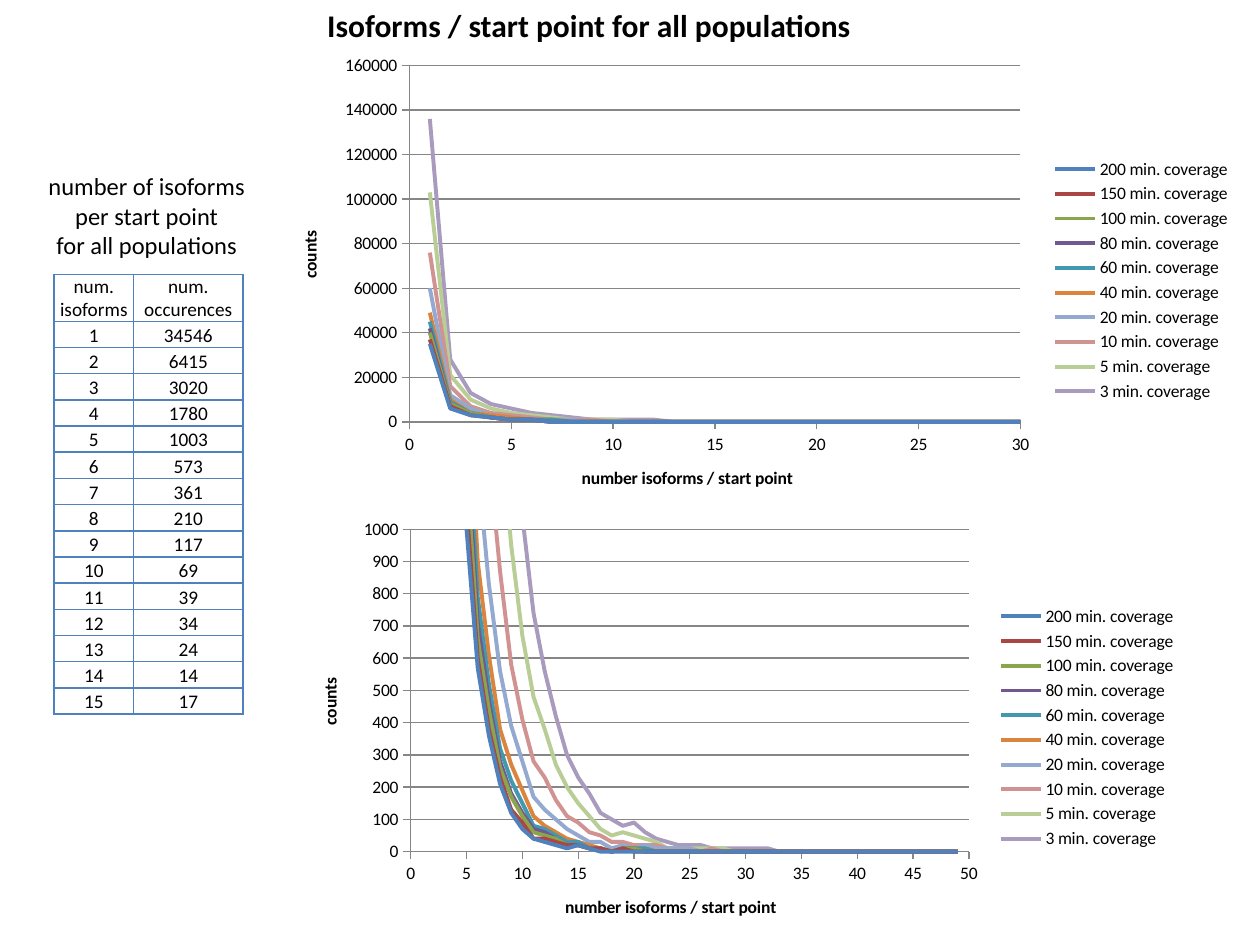
from lxml.etree import SubElement
from pptx import Presentation
from pptx.chart.data import XyChartData
from pptx.dml.color import RGBColor
from pptx.enum.chart import XL_CHART_TYPE, XL_LEGEND_POSITION, XL_TICK_LABEL_POSITION, XL_TICK_MARK
from pptx.enum.text import MSO_ANCHOR, MSO_AUTO_SIZE, PP_ALIGN
from pptx.oxml import parse_xml
from pptx.oxml.ns import nsdecls, qn
from pptx.util import Inches, Pt

FONT = "Calibri"
COLORS = {"text": "000000", "border": "4F81BD", "axis": "868686"}

# Text boxes: lines, (left, top, width, height), size, bold
TEXTS = [
    (["Isoforms / start point for all populations"], (2.48, 0, 4.39, 0.4), 18, True),
    (["number of isoforms", "per start point", "for all populations"],
     (0.28, 1.31, 1.77, 0.81), 14, False),
]

# Table
HEADERS = ["num.\nisoforms", "num. occurences"]
OCCURRENCES = [34546, 6415, 3020, 1780, 1003, 573, 361, 210, 117, 69, 39, 34, 24, 14, 17]
TABLE_LEFT, TABLE_TOP, TABLE_HEIGHT = 0.43, 2.18, 3.49
COLUMN_WIDTHS = [0.63, 0.87]
HEADER_HEIGHT = 0.37

# Minimum coverage: line colour, counts for 1, 2, 3 ... isoforms (zero after the last)
POINT_COUNT = 49
COVERAGE = {
    200: ("4F81BD", [34550, 6420, 3020, 1780, 1000, 570, 360, 210, 120, 70, 40, 30, 20, 10,
                     20, 10]),
    150: ("AA4643", [36570, 6920, 3230, 1890, 1070, 600, 380, 230, 130, 90, 40, 40, 30, 20,
                     20, 10, 10, 0, 10]),
    100: ("89A54E", [39690, 7720, 3550, 2050, 1200, 660, 440, 260, 170, 110, 60, 50, 40, 20,
                     20, 10, 10, 0, 10, 10]),
    80: ("71588F", [41590, 8200, 3750, 2160, 1280, 710, 470, 280, 180, 120, 70, 60, 40, 20,
                    20, 10, 10, 0, 10, 10]),
    60: ("4198AF", [44540, 8870, 4020, 2310, 1390, 790, 520, 320, 220, 150, 80, 70, 50, 30,
                    30, 10, 10, 0, 10, 10, 10]),
    40: ("DB843D", [49290, 9950, 4450, 2550, 1580, 900, 610, 380, 270, 190, 110, 80, 60, 40,
                    30, 20, 10, 0, 10, 10, 10]),
    20: ("93A9CF", [60280, 12410, 5520, 3210, 2000, 1200, 830, 560, 390, 280, 170, 130, 100,
                    70, 50, 30, 30, 10, 20, 10, 20, 10, 10, 10, 10]),
    10: ("D19392", [76450, 15810, 7100, 4190, 2740, 1710, 1230, 870, 580, 410, 280, 230, 160,
                    110, 90, 60, 50, 30, 30, 20, 20, 20, 10, 10, 10, 0, 10]),
    5: ("B9CD96", [103070, 21160, 9660, 5900, 3960, 2640, 1890, 1360, 950, 670, 480, 380, 270,
                   200, 150, 110, 70, 50, 60, 50, 40, 30, 10, 10, 10, 10, 10, 10]),
    3: ("A99BBD", [136260, 27710, 12950, 8190, 5590, 3790, 2780, 2060, 1440, 1040, 740, 560,
                   420, 300, 230, 180, 120, 100, 80, 90, 60, 40, 30, 20, 20, 20, 10, 10, 10,
                   10, 10, 10]),
}

# Charts: frame, plot area on the slide, x limits, y limits, rounding digits
CHARTS = [
    ((2.17, 0.36, 7.7, 3.73), (3.25, 0.52, 4.85, 2.83), (0, 30), None, -3),
    ((2.32, 4.05, 7.12, 3.45), (3.26, 4.2, 4.43, 2.56), (0, 50), (0, 1000), -1),
]


def style_font(font, size, bold=False):
    font.name, font.size, font.bold = FONT, Pt(size), bold
    font.color.rgb = RGBColor.from_string(COLORS["text"])


def style_paragraphs(text_frame, size, bold=False):
    for paragraph in text_frame.paragraphs:
        paragraph.alignment = PP_ALIGN.CENTER
        for run in paragraph.runs:
            style_font(run.font, size, bold)


def style_line(line, color, width):
    line.color.rgb = RGBColor.from_string(color)
    line.width = Pt(width)


def add_text(slide, lines, frame, size, bold):
    text_frame = slide.shapes.add_textbox(*map(Inches, frame)).text_frame
    text_frame.word_wrap = False
    text_frame.auto_size = MSO_AUTO_SIZE.SHAPE_TO_FIT_TEXT
    text_frame.text = "\n".join(lines)
    style_paragraphs(text_frame, size, bold)


def style_cell(cell):
    cell.margin_left = cell.margin_right = cell.margin_top = cell.margin_bottom = 0
    cell.vertical_anchor = MSO_ANCHOR.BOTTOM
    style_paragraphs(cell.text_frame, 11)
    properties = cell._tc.get_or_add_tcPr()
    for side in ("lnL", "lnR", "lnT", "lnB"):
        properties.append(parse_xml(
            f'<a:{side} {nsdecls("a")} w="{Pt(1)}"><a:solidFill>'
            f'<a:srgbClr val="{COLORS["border"]}"/></a:solidFill></a:{side}>'))
    cell.fill.background()


def add_occurrence_table(slide):
    rows = [HEADERS] + [[str(number), str(count)]
                        for number, count in enumerate(OCCURRENCES, 1)]
    row_height = (TABLE_HEIGHT - HEADER_HEIGHT) / len(OCCURRENCES)
    heights = [HEADER_HEIGHT] + [row_height] * len(OCCURRENCES)
    table = slide.shapes.add_table(
        len(rows), len(HEADERS), Inches(TABLE_LEFT), Inches(TABLE_TOP),
        Inches(sum(COLUMN_WIDTHS)), Inches(TABLE_HEIGHT)).table
    table.first_row = table.horz_banding = False
    for column, width in zip(table.columns, COLUMN_WIDTHS):
        column.width = Inches(width)
    for row, height, texts in zip(table.rows, heights, rows):
        row.height = Inches(height)
        for cell, text in zip(row.cells, texts):
            cell.text_frame.text = text
            style_cell(cell)


def place_plot(chart, frame, plot_frame):
    left, top, width, height = frame
    plot_left, plot_top, plot_width, plot_height = plot_frame
    fractions = ((plot_left - left) / width, (plot_top - top) / height,
                 plot_width / width, plot_height / height)
    plot_area = chart._chartSpace.chart.plotArea
    for layout in plot_area.findall(qn("c:layout")):
        plot_area.remove(layout)
    layout = parse_xml(f'<c:layout {nsdecls("c")}><c:manualLayout/></c:layout>')
    settings = [("layoutTarget", "inner"), ("xMode", "edge"), ("yMode", "edge"),
                *zip("xywh", fractions)]
    for name, value in settings:
        SubElement(layout[0], qn(f"c:{name}")).set("val", str(value))
    plot_area.insert(0, layout)


def style_axis(axis, title, limits, gridlines):
    axis.axis_title.text_frame.text = title
    style_font(axis.axis_title.text_frame.paragraphs[0].runs[0].font, 10, True)
    axis.major_tick_mark = XL_TICK_MARK.OUTSIDE
    axis.tick_label_position = XL_TICK_LABEL_POSITION.NEXT_TO_AXIS
    style_line(axis.format.line, COLORS["axis"], 0.75)
    axis.has_major_gridlines = gridlines
    if gridlines:
        style_line(axis.major_gridlines.format.line, COLORS["axis"], 0.75)
    if limits:
        axis.minimum_scale, axis.maximum_scale = limits


def add_coverage_chart(slide, frame, plot_frame, x_limits, y_limits, digits):
    data = XyChartData()
    for coverage, (_, counts) in COVERAGE.items():
        series = data.add_series(f"{coverage} min. coverage")
        padded = counts + [0] * (POINT_COUNT - len(counts))
        for number, count in enumerate(padded, 1):
            series.add_data_point(number, round(count, digits))
    chart = slide.shapes.add_chart(
        XL_CHART_TYPE.XY_SCATTER_LINES_NO_MARKERS, *map(Inches, frame), data).chart
    style_font(chart.font, 10)
    chart.has_title = False
    chart.has_legend = True
    chart.legend.position = XL_LEGEND_POSITION.RIGHT
    chart.legend.include_in_layout = False
    plot = chart.plots[0]
    plot.vary_by_categories = False
    for series, (color, _) in zip(plot.series, COVERAGE.values()):
        series.smooth = False
        style_line(series.format.line, color, 2.25)
    style_axis(chart.category_axis, "number isoforms / start point", x_limits, False)
    style_axis(chart.value_axis, "counts", y_limits, True)
    place_plot(chart, frame, plot_frame)


def main():
    presentation = Presentation()
    presentation.slide_width, presentation.slide_height = Inches(10), Inches(7.5)
    slide = presentation.slides.add_slide(presentation.slide_layouts[6])
    heading, table_caption = TEXTS
    add_text(slide, *heading)
    add_occurrence_table(slide)
    add_text(slide, *table_caption)
    for chart in CHARTS:
        add_coverage_chart(slide, *chart)
    presentation.save("out.pptx")


if __name__ == "__main__":
    main()
